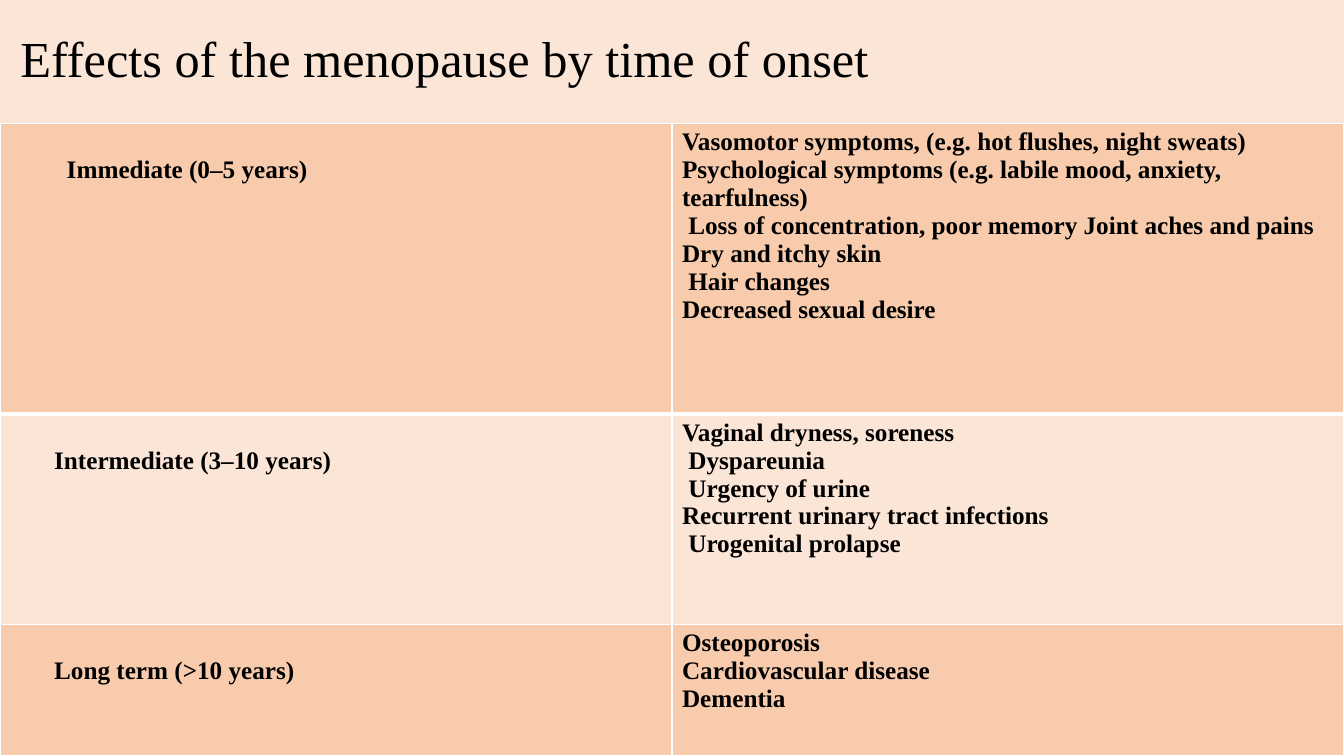
from dataclasses import dataclass

from lxml import etree
from pptx import Presentation
from pptx.dml.color import RGBColor
from pptx.enum.shapes import MSO_SHAPE
from pptx.enum.text import MSO_ANCHOR, PP_ALIGN
from pptx.oxml.ns import qn
from pptx.util import Pt

RECTANGLE = MSO_SHAPE.RECTANGLE
MIDDLE = MSO_ANCHOR.MIDDLE
LEFT = PP_ALIGN.LEFT


@dataclass(frozen=True)
class Theme:
    """Colours, font and type sizes of the slide."""
    ink: RGBColor = RGBColor(0x00, 0x00, 0x00)
    pale: RGBColor = RGBColor(0xFB, 0xE5, 0xD6)
    peach: RGBColor = RGBColor(0xF8, 0xCB, 0xAD)
    rule: str = "FFFFFF"
    font: str = "Times New Roman"
    title_size: int = 36
    body_size: int = 18


THEME = Theme()
SLIDE_WIDTH, SLIDE_HEIGHT, TITLE_HEIGHT = 960, 540, 88
THIN_RULE, HEADER_RULE = 1, 3
PERIOD_TOP = 23.6

STAGES = [
    ("Immediate (0–5 years)", 47.7, 207.5, [
        "Vasomotor symptoms, (e.g. hot flushes, night sweats) "
        "Psychological symptoms (e.g. labile mood, anxiety, tearfulness)",
        " Loss of concentration, poor memory Joint aches and pains "
        "Dry and itchy skin",
        " Hair changes",
        "Decreased sexual desire",
    ]),
    ("Intermediate (3–10 years)", 38.7, 150.5, [
        "Vaginal dryness, soreness",
        " Dyspareunia",
        " Urgency of urine",
        "Recurrent urinary tract infections",
        " Urogenital prolapse",
    ]),
    ("Long term (>10 years)", 38.7, 94, [
        "Osteoporosis",
        "Cardiovascular disease",
        "Dementia",
    ]),
]


def style_text(frame, size, bold):
    """Apply the theme's font to every run of a text frame."""
    for paragraph in frame.paragraphs:
        paragraph.alignment = LEFT
        for run in paragraph.runs:
            run.font.name = THEME.font
            run.font.size = Pt(size)
            run.font.bold = bold
            run.font.color.rgb = THEME.ink


def rule_cell(cell, top, bottom):
    """Draw rules of the given widths above and below a cell, thin at its sides."""
    properties = cell._tc.get_or_add_tcPr()
    widths = {"a:lnL": THIN_RULE, "a:lnR": THIN_RULE, "a:lnT": top, "a:lnB": bottom}
    for side, width in widths.items():
        line = etree.SubElement(properties, qn(side), w=str(Pt(width)))
        fill = etree.SubElement(line, qn("a:solidFill"))
        etree.SubElement(fill, qn("a:srgbClr"), val=THEME.rule)


def add_title(slide, left, top, width, height):
    """Place the title band in the given box."""
    title = slide.shapes.add_shape(RECTANGLE, Pt(left), Pt(top), Pt(width), Pt(height))
    title.shadow.inherit = False
    title.fill.solid()
    title.fill.fore_color.rgb = THEME.pale
    title.line.fill.background()
    frame = title.text_frame
    frame.word_wrap = True
    frame.vertical_anchor = MIDDLE
    frame.margin_left = Pt(14.5)
    frame.text = "Effects of the menopause by time of onset"
    frame.paragraphs[0].line_spacing = 0.9
    style_text(frame, THEME.title_size, False)


def add_effects_table(slide, left, top, width, height):
    """Place the table of periods and their effects in the given box."""
    effects_table = slide.shapes.add_table(
        len(STAGES), 2, Pt(left), Pt(top), Pt(width), Pt(height)).table
    for column in effects_table.columns:
        column.width = Pt(width / 2)
    for index, (period, indent, row_height, effects) in enumerate(STAGES):
        effects_table.rows[index].height = Pt(row_height)
        period_cell = effects_table.cell(index, 0)
        effects_cell = effects_table.cell(index, 1)
        period_cell.margin_left = Pt(indent)
        period_cell.margin_top = Pt(PERIOD_TOP)
        period_cell.text_frame.text = period
        effects_cell.text_frame.text = "\n".join(effects)
        for cell in (period_cell, effects_cell):
            rule_cell(cell,
                      HEADER_RULE if index == 1 else THIN_RULE,
                      HEADER_RULE if index == 0 else THIN_RULE)
            cell.fill.solid()
            cell.fill.fore_color.rgb = THEME.pale if index % 2 else THEME.peach
            style_text(cell.text_frame, THEME.body_size, True)


def main():
    """Build and save the slide."""
    deck = Presentation()
    deck.slide_width, deck.slide_height = Pt(SLIDE_WIDTH), Pt(SLIDE_HEIGHT)
    slide = deck.slides.add_slide(deck.slide_layouts[6])
    add_title(slide, 0, 0, SLIDE_WIDTH, TITLE_HEIGHT)
    add_effects_table(slide, 0, TITLE_HEIGHT, SLIDE_WIDTH, SLIDE_HEIGHT - TITLE_HEIGHT)
    deck.save("out.pptx")


if __name__ == "__main__":
    main()
